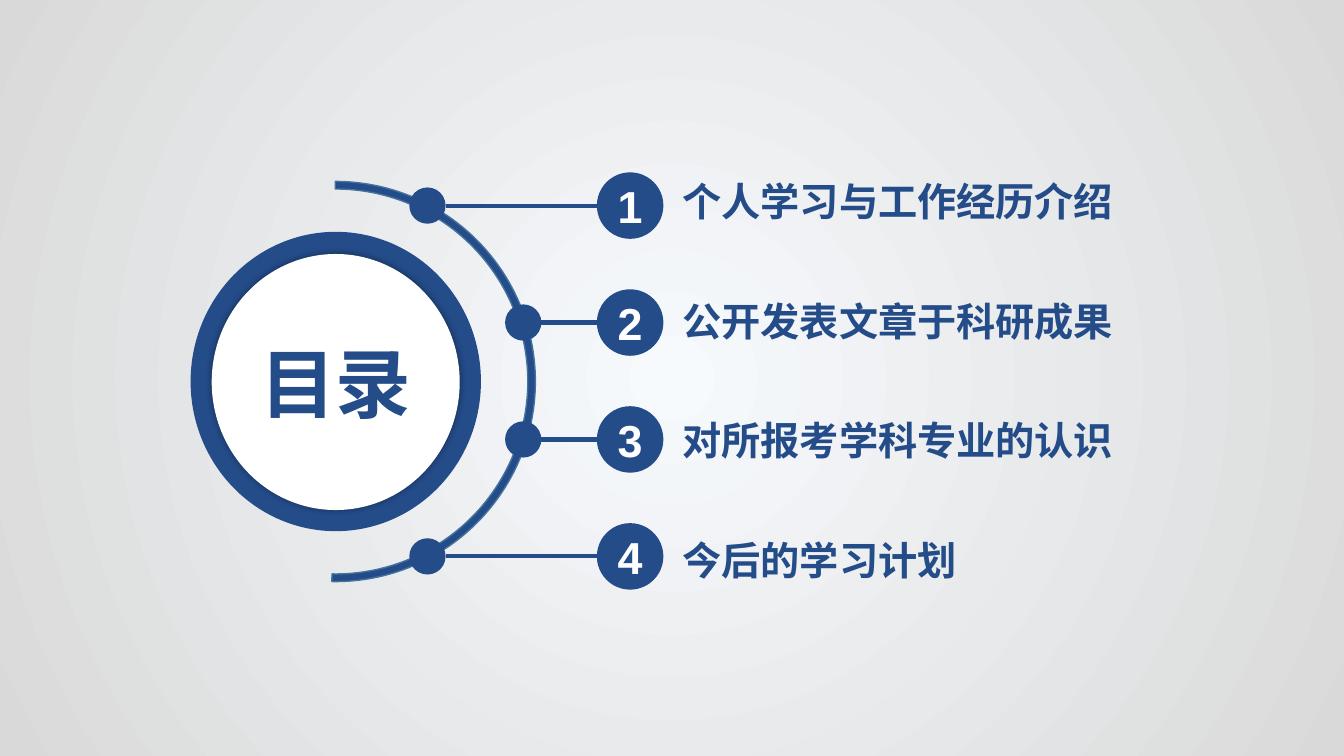
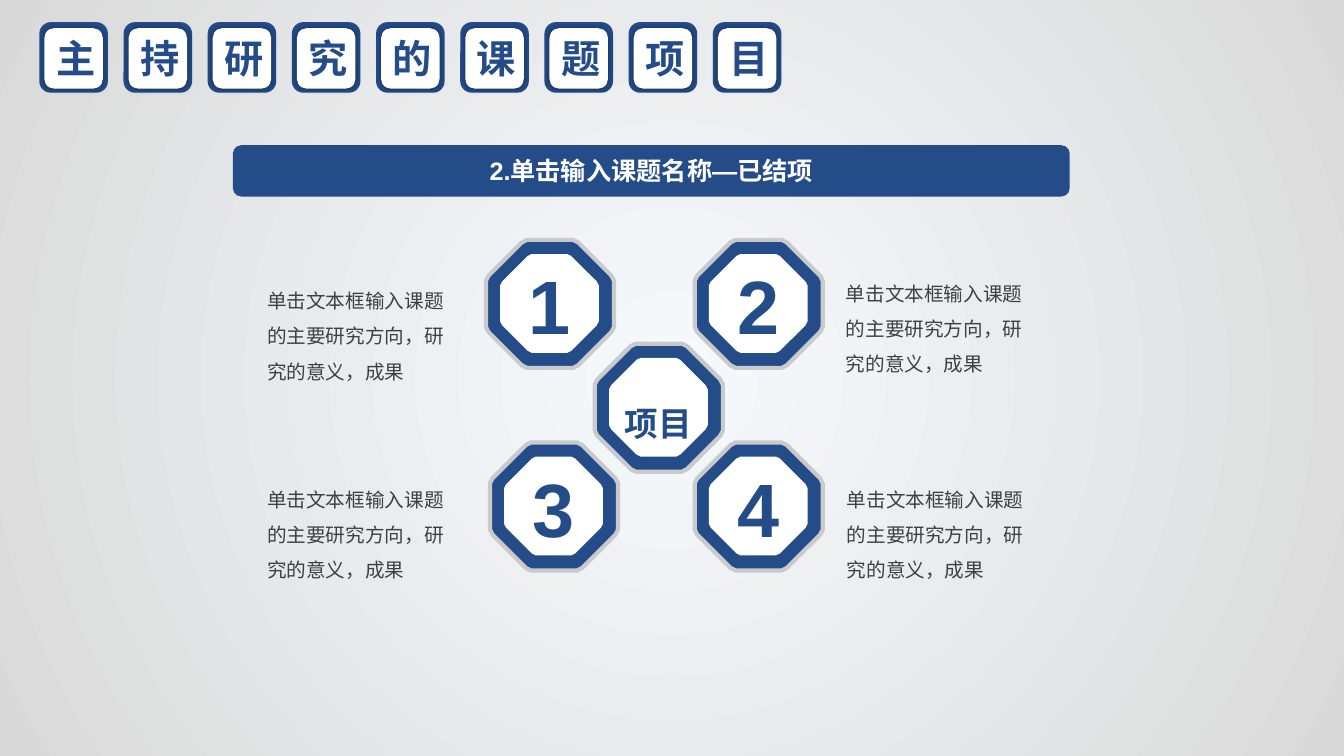
from lxml import etree
from pptx import Presentation
from pptx.dml.color import RGBColor
from pptx.enum.shapes import MSO_CONNECTOR, MSO_SHAPE
from pptx.enum.text import MSO_ANCHOR, MSO_AUTO_SIZE, PP_ALIGN
from pptx.oxml.ns import qn
from pptx.util import Inches, Pt

OVAL, ROUND, ARC = MSO_SHAPE.OVAL, MSO_SHAPE.ROUNDED_RECTANGLE, MSO_SHAPE.BLOCK_ARC
LEFT, CENTER = PP_ALIGN.LEFT, PP_ALIGN.CENTER
TOP, MIDDLE = MSO_ANCHOR.TOP, MSO_ANCHOR.MIDDLE
STRAIGHT, NO_FIT = MSO_CONNECTOR.STRAIGHT, MSO_AUTO_SIZE.NONE

# Shared style
FONT = "Arial"
BLUE, WHITE, GRAY, RIM, EDGE = "244C89", "FFFFFF", "404040", "C9CACC", "43739E"
GLOW = ("F7FAFD", "D9D9D9")

# Content
AGENDA = "目录"
TOPICS = [  # label, left of the dot on the arc
    ("个人学习与工作经历介绍", 4.06),
    ("公开发表文章于科研成果", 5.01),
    ("对所报考学科专业的认识", 5.01),
    ("今后的学习计划", 4.06),
]
HEAD = "主持研究的课题项目"
BANNER = "2.单击输入课题名称—已结项"
NOTE = "单击文本框输入课题的主要研究方向，研究的意义，成果"
NOTES = [(2.55, 2.7, 2.08), (8.29, 2.63, 2.12), (2.55, 4.67, 2.08), (8.3, 4.67, 2.12)]
BADGES = [  # text, left, top, size, line spacing
    ("1", 4.82, 2.38, 54, 1),
    ("项目", 5.9, 3.41, 24, 2),
    ("2", 6.89, 2.38, 54, 1),
    ("4", 6.89, 4.39, 54, 1),
    ("3", 4.86, 4.39, 54, 1),
]


def rgb(code):
    return RGBColor.from_string(code)


def box(left, top, width, height):
    return [Inches(v) for v in (left, top, width, height)]


def write(shape, text, size, color=BLUE, bold=True, align=CENTER, anchor=MIDDLE,
          wrap=True, space=1, track=0):
    frame = shape.text_frame
    frame.word_wrap, frame.vertical_anchor = wrap, anchor
    frame.auto_size = NO_FIT
    para = frame.paragraphs[0]
    para.alignment, para.line_spacing = align, space
    run = para.add_run()
    run.text = text
    font = run.font
    font.name, font.size, font.bold = FONT, Pt(size), bold
    font.color.rgb = rgb(color)
    props = run._r.get_or_add_rPr()
    props.set("lang", "zh-CN")
    if track:
        props.set("spc", str(round(track * 100)))
    etree.SubElement(props, qn("a:ea")).set("typeface", FONT)


def paint(shape, fill, line=None, width=1, glow=False):
    shape.shadow.inherit = False
    shape.fill.solid()
    shape.fill.fore_color.rgb = rgb(fill)
    if line:
        shape.line.color.rgb = rgb(line)
        shape.line.width = Pt(width)
    else:
        shape.line.fill.background()
    if glow:
        effects = shape.element.spPr.find(qn("a:effectLst"))
        shade = etree.SubElement(effects, qn("a:outerShdw"), blurRad="63500", dist="0")
        black = etree.SubElement(shade, qn("a:srgbClr"), val="000000")
        etree.SubElement(black, qn("a:alpha"), val="40000")
    return shape


def draw(slide, kind, place, fill, **style):
    return paint(slide.shapes.add_shape(kind, *box(*place)), fill, **style)


def label(slide, place, text, size, **style):
    area = slide.shapes.add_textbox(*box(*place))
    write(area, text, size, align=LEFT, anchor=TOP, **style)


def title(slide, place, text, size, **style):
    head = slide.shapes.title
    head.left, head.top, head.width, head.height = box(*place)
    frame = head.text_frame
    frame.margin_left = frame.margin_right = 0
    write(head, text, size, **style)
    head.element.getparent().append(head.element)  # bring to front


def link(slide, start, end, y):
    line = slide.shapes.add_connector(
        STRAIGHT, Inches(start), Inches(y), Inches(end), Inches(y))
    line.line.color.rgb = rgb(BLUE)
    line.line.width = Pt(3)
    etree.SubElement(line.element.spPr, qn("a:effectLst"))


def octagon(slide, left, top, size, fill, **style):
    corner = [(0, 0.32), (0.02, 0.28), (0.28, 0.02), (0.32, 0)]
    spots = []
    for _ in range(4):
        spots += corner
        corner = [(1 - y, x) for x, y in corner]
    spots = [(Inches(left + x * size), Inches(top + y * size)) for x, y in spots]
    pen = slide.shapes.build_freeform(*spots[0])
    pen.add_line_segments(spots[1:], close=True)
    return paint(pen.convert_to_shape(), fill, **style)


def backdrop(master):
    fill = master.background.fill
    fill.gradient()
    for stop, color in zip(fill.gradient_stops, GLOW):
        stop.color.rgb = rgb(color)
    grad = master.element.find(".//" + qn("a:gradFill"))
    grad.remove(grad.find(qn("a:lin")))
    ring = etree.SubElement(grad, qn("a:path"))
    ring.set("path", "circle")
    mid = {side: "50000" for side in "ltrb"}
    etree.SubElement(ring, qn("a:fillToRect"), mid)


def agenda(slide):
    # Disc and arc
    disc = (2.1, 2.52, 2.46, 2.54)
    draw(slide, OVAL, (1.89, 2.3, 2.88, 2.97), BLUE)
    draw(slide, OVAL, disc, WHITE, glow=True)
    arc = draw(slide, ARC, (1.34, 1.8, 3.97, 3.97), BLUE, line=EDGE)
    arc.rotation = 90
    for i, value in enumerate((108, 0.58, 0.019)):
        arc.adjustments[i] = value
    # Topic rows
    dot, ball, x = 0.36, 0.66, 5.92
    for i, (text, left) in enumerate(TOPICS):
        y = 2.04 + 1.16 * i
        draw(slide, OVAL, (left, y - dot / 2, dot, dot), BLUE)
        link(slide, left + dot, x + 0.02, y)
        badge = draw(slide, OVAL, (x, y - ball / 2, ball, ball), BLUE)
        write(badge, str(i + 1), 32, WHITE, wrap=False)
        label(slide, (6.67, 1.71 + 1.187 * i, 4.52, 0.57), text, 28, wrap=False)
    title(slide, disc, AGENDA, 54)


def project(slide):
    # Heading: one tile behind each letter
    pitch, size = 0.835, 28
    for i in range(len(HEAD)):
        left = 0.39 + pitch * i
        draw(slide, ROUND, (left, 0.22, 0.68, 0.7), BLUE)
        draw(slide, ROUND, (left + 0.05, 0.28, 0.58, 0.6), WHITE, glow=True)
    title(slide, (0.56, 0.22, 7.6, 0.7), HEAD, size, align=LEFT, wrap=False,
          track=pitch * 72 - size)
    # Octagons
    for text, left, top, points, space in BADGES:
        octagon(slide, left, top, 1.27, BLUE, line=RIM, width=3)
        face = octagon(slide, left + 0.14, top + 0.14, 0.98, WHITE)
        write(face, text, points, anchor=TOP, space=space)
    # Notes and banner
    for left, top, width in NOTES:
        label(slide, (left, top, width, 1.12), NOTE, 14, color=GRAY, bold=False, space=1.5)
    bar = draw(slide, ROUND, (2.31, 1.44, 8.3, 0.51), BLUE)
    write(bar, BANNER, 18, WHITE)


def main():
    prs = Presentation()
    prs.slide_width, prs.slide_height = Inches(13.33), Inches(7.5)
    backdrop(prs.slide_master)
    for build in (agenda, project):
        build(prs.slides.add_slide(prs.slide_layouts[5]))
    prs.save("out.pptx")


if __name__ == "__main__":
    main()
